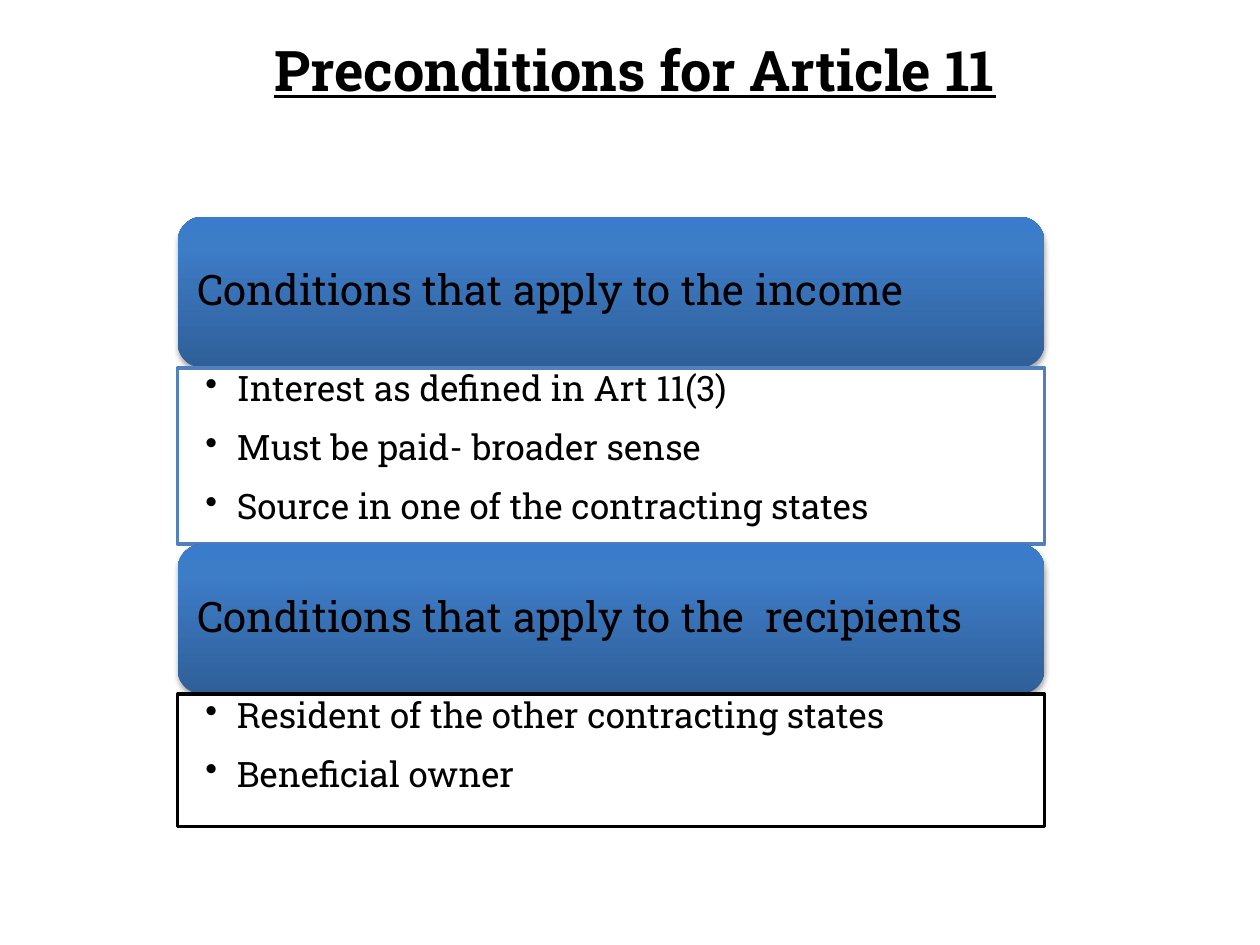
from pptx import Presentation
from pptx.dml.color import RGBColor
from pptx.enum.shapes import MSO_SHAPE
from pptx.enum.text import MSO_ANCHOR, PP_ALIGN
from pptx.oxml import parse_xml
from pptx.oxml.ns import nsdecls, qn
from pptx.util import Inches, Pt

LEFT, WIDTH = 1.41, 6.88
GRADIENT_STOPS = [(0, "2F5F99"), (80, "3D7CC7"), (100, "3A7CCB")]
SECTIONS = [
    {"heading": "Conditions that apply to the income", "heading_height": 1.2,
     "points": ["Interest as defined in Art 11(3)",
                "Must be paid- broader sense",
                "Source in one of the contracting states"],
     "points_height": 1.4, "line": "4F81BD"},
    {"heading": "Conditions that apply to the  recipients", "heading_height": 1.19,
     "points": ["Resident of the other contracting states",
                "Beneficial owner"],
     "points_height": 1.05, "line": "000000"},
]


def color(hex_value):
    return RGBColor.from_string(hex_value)


def write(shape, lines, size, anchor, margins, paragraph_format, **font_format):
    """Fill a shape with one paragraph per line; margins are left, top, right, bottom."""
    frame = shape.text_frame
    frame.word_wrap = True
    frame.vertical_anchor = anchor
    for side, margin in zip(("left", "top", "right", "bottom"), margins):
        setattr(frame, f"margin_{side}", Inches(margin))
    for index, line in enumerate(lines):
        para = frame.paragraphs[0] if index == 0 else frame.add_paragraph()
        for name, value in paragraph_format.items():
            setattr(para, name, value)
        span = para.add_run()
        span.text = line
        span.font.color.rgb = color("000000")
        for name, value in {"name": "Roboto Slab", "size": Pt(size), **font_format}.items():
            setattr(span.font, name, value)


deck = Presentation()
deck.slide_width, deck.slide_height = Inches(10), Inches(7.5)
page = deck.slides.add_slide(deck.slide_layouts[6])

title = page.shapes.add_textbox(Inches(0.94), Inches(0.23), Inches(8.2), Inches(0.64))
write(title, ["Preconditions for Article 11"], 32, MSO_ANCHOR.TOP, (0.1, 0.05, 0.1, 0.05),
      {"alignment": PP_ALIGN.CENTER}, bold=True, underline=True)

top = 1.72
for section in SECTIONS:
    heading = page.shapes.add_shape(
        MSO_SHAPE.ROUNDED_RECTANGLE, Inches(LEFT), Inches(top),
        Inches(WIDTH), Inches(section["heading_height"]))
    heading.line.fill.background()
    heading.fill.gradient()
    stops = "".join(f'<a:gs pos="{position * 1000}"><a:srgbClr val="{value}"/></a:gs>'
                    for position, value in GRADIENT_STOPS)
    properties = heading.element.spPr
    properties.replace(properties.find(qn("a:gradFill")), parse_xml(
        f'<a:gradFill {nsdecls("a")} rotWithShape="1"><a:gsLst>{stops}</a:gsLst>'
        '<a:lin ang="16200000" scaled="0"/></a:gradFill>'))
    heading.shadow.inherit = False
    properties.find(qn("a:effectLst")).append(parse_xml(
        f'<a:outerShdw {nsdecls("a")} blurRad="{Pt(3.1)}" dist="{Pt(1.8)}" dir="5400000" '
        'rotWithShape="0"><a:srgbClr val="000000"><a:alpha val="35000"/></a:srgbClr>'
        '</a:outerShdw>'))
    write(heading, [section["heading"]], 24, MSO_ANCHOR.MIDDLE, (0.1, 0.1, 0.1, 0.1),
          {"alignment": PP_ALIGN.LEFT, "line_spacing": 0.9})
    top += section["heading_height"]

    panel = page.shapes.add_shape(
        MSO_SHAPE.RECTANGLE, Inches(LEFT), Inches(top),
        Inches(WIDTH), Inches(section["points_height"]))
    panel.shadow.inherit = False
    panel.fill.solid()
    panel.fill.fore_color.rgb = color("FFFFFF")
    panel.line.color.rgb = color(section["line"])
    panel.line.width = Pt(2)
    write(panel, section["points"], 20, MSO_ANCHOR.TOP, (0.22, 0.03, 0.16, 0.03),
          {"alignment": PP_ALIGN.LEFT, "level": 1, "line_spacing": 0.9,
           "space_after": Pt(12)})
    for para in panel.text_frame.paragraphs:
        bullet_format = para._p.get_or_add_pPr()
        bullet_format.set("marL", str(Inches(0.25)))
        bullet_format.set("indent", str(Inches(-0.25)))
        bullet_format.append(parse_xml(f'<a:buChar {nsdecls("a")} char="•"/>'))
    top += section["points_height"]

deck.save("out.pptx")
